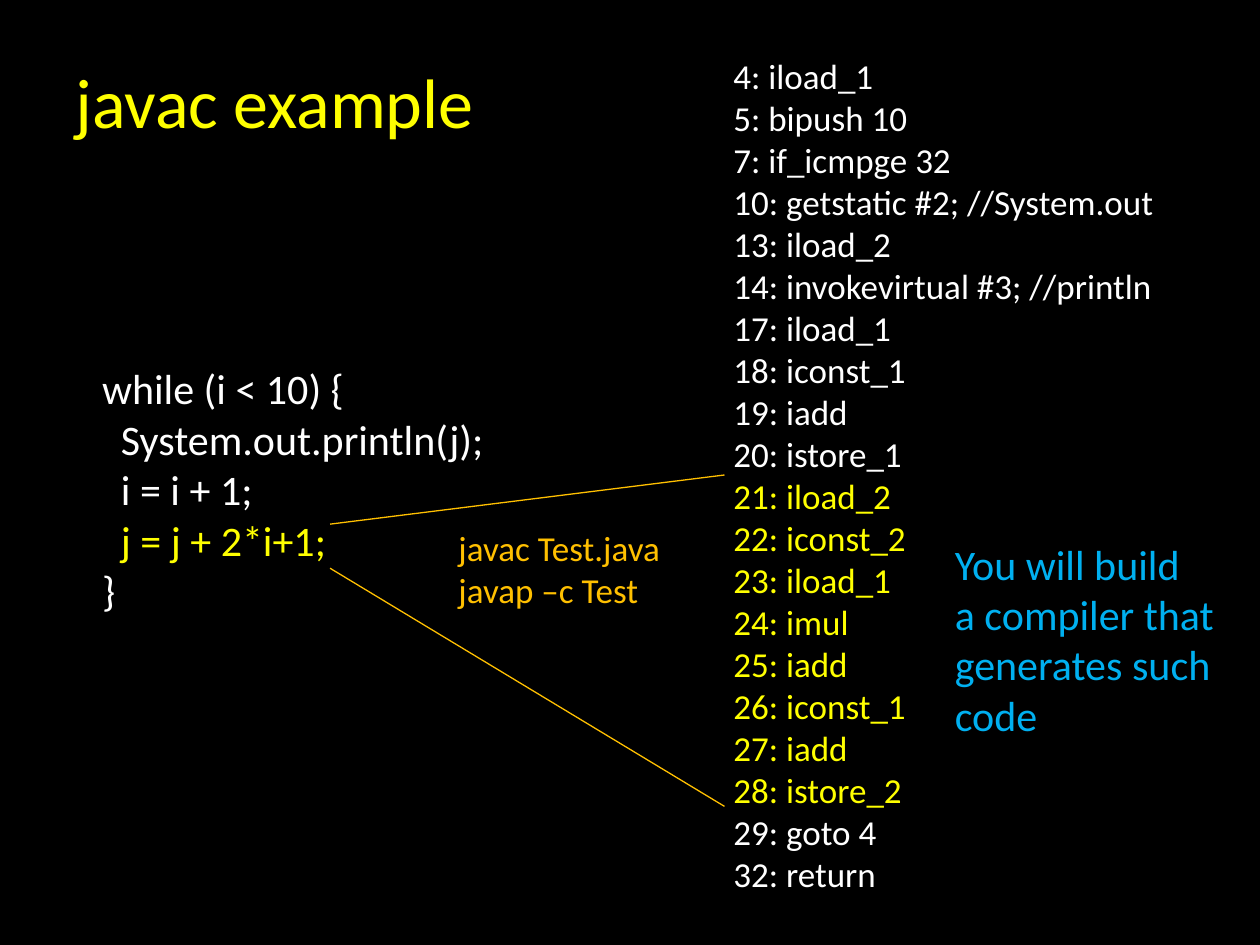
"""Builds the slide that shows a Java loop beside its bytecode."""
from lxml import etree
from pptx import Presentation
from pptx.dml.color import RGBColor
from pptx.enum.shapes import MSO_CONNECTOR
from pptx.enum.text import MSO_ANCHOR
from pptx.oxml.ns import qn
from pptx.util import Inches, Pt

STRAIGHT = MSO_CONNECTOR.STRAIGHT
MIDDLE = MSO_ANCHOR.MIDDLE
COLORS = {
    "background": "000000",
    "plain": "FFFFFF",
    "highlight": "FFFF00",
    "command": "FFC000",
    "remark": "00B0F0",
}


def color(name):
    return RGBColor.from_string(COLORS[name])


def add_lines(box, size, lines, wrap=True, inset=0.1):
    """Adds a text box; each line is (text, color name, indent in inches)."""
    frame = slide.shapes.add_textbox(*map(Inches, box)).text_frame
    frame.word_wrap = wrap
    frame.vertical_anchor = MIDDLE
    frame.margin_left = Inches(inset)
    for number, (text, color_name, indent) in enumerate(lines):
        line = frame.add_paragraph() if number else frame.paragraphs[0]
        line.text = text
        line.font.name = "Calibri"
        line.font.size = Pt(size)
        line.font.color.rgb = color(color_name)
        if indent:
            line._p.get_or_add_pPr().set("marL", str(Inches(indent)))


prs = Presentation()
prs.slide_width, prs.slide_height = Inches(10), Inches(7.5)
slide = prs.slides.add_slide(prs.slide_layouts[6])
slide.background.fill.solid()
slide.background.fill.fore_color.rgb = color("background")

add_lines((0.5, 0.17, 9, 1.25), 40, [("javac example", "highlight", 0)])

loop = [
    ("while (i < 10) {", "plain", 0),
    ("System.out.println(j);", "plain", 0.15),
    ("i = i + 1;", "plain", 0.15),
    ("j = j + 2*i+1;", "highlight", 0.15),
    ("}", "plain", 0),
]
add_lines((0.41, 2.82, 3.62, 2.12), 24, loop, inset=0.4)

bytecode = [
    (4, "iload_1"),
    (5, "bipush 10"),
    (7, "if_icmpge 32"),
    (10, "getstatic #2; //System.out"),
    (13, "iload_2"),
    (14, "invokevirtual #3; //println"),
    (17, "iload_1"),
    (18, "iconst_1"),
    (19, "iadd"),
    (20, "istore_1"),
    (21, "iload_2"),
    (22, "iconst_2"),
    (23, "iload_1"),
    (24, "imul"),
    (25, "iadd"),
    (26, "iconst_1"),
    (27, "iadd"),
    (28, "istore_2"),
    (29, "goto 4"),
    (32, "return"),
]
instructions = [
    (f"{offset}: {code}", "highlight" if 21 <= offset <= 28 else "plain", 0)
    for offset, code in bytecode
]
add_lines((5.59, 0.35, 4.02, 6.83), 20, instructions, inset=0.23)

commands = [(text, "command", 0) for text in ("javac Test.java", "javap –c Test")]
add_lines((3.54, 4.13, 1.82, 0.77), 20, commands, wrap=False)

for start_y, end_y in ((4.16, 3.77), (4.51, 6.4)):
    guide = slide.shapes.add_connector(
        STRAIGHT, Inches(2.62), Inches(start_y), Inches(5.75), Inches(end_y)
    )
    guide.line.color.rgb = color("command")
    guide.line.width = Pt(0.75)
    etree.SubElement(guide._element.spPr, qn("a:effectLst"))

remark = "You will build \va compiler that\vgenerates such code"
add_lines((7.48, 4.21, 2.52, 1.72), 24, [(remark, "remark", 0)])

prs.save("out.pptx")
